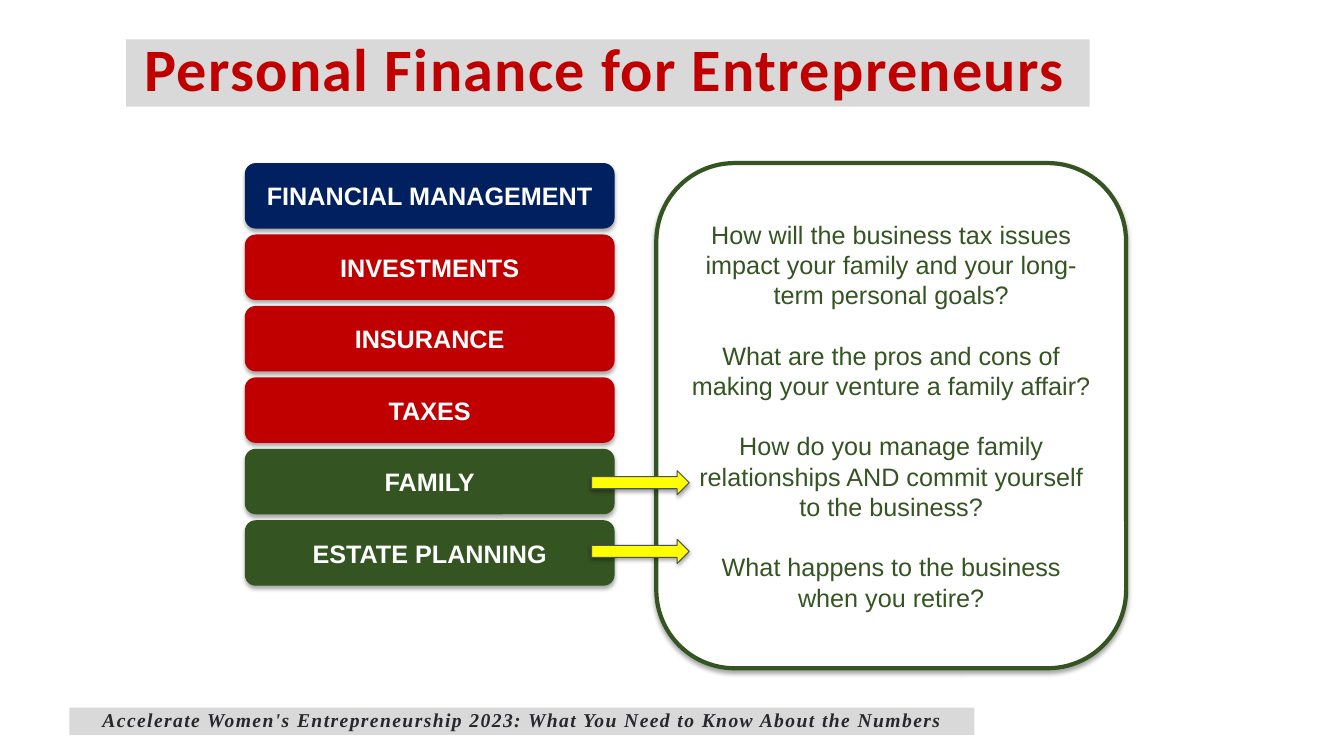
import lxml.etree
import pptx
import pptx.dml.color
import pptx.enum.shapes
import pptx.enum.text
import pptx.oxml.ns
import pptx.util

Cm = pptx.util.Cm
Pt = pptx.util.Pt
RGBColor = pptx.dml.color.RGBColor
MSO_SHAPE = pptx.enum.shapes.MSO_SHAPE
MSO_ANCHOR = pptx.enum.text.MSO_ANCHOR
PP_ALIGN = pptx.enum.text.PP_ALIGN
qn = pptx.oxml.ns.qn

NAVY = RGBColor(0x00, 0x20, 0x60)
RED = RGBColor(0xC0, 0x00, 0x00)
GREEN = RGBColor(0x34, 0x55, 0x22)
YELLOW = RGBColor(0xFF, 0xFF, 0x00)
WHITE = RGBColor(0xFF, 0xFF, 0xFF)
GREY = RGBColor(0xD9, 0xD9, 0xD9)
SLATE = RGBColor(0x4C, 0x51, 0x5A)
INK = RGBColor(0x26, 0x28, 0x2D)

TOPICS = [
    ("FINANCIAL MANAGEMENT", NAVY),
    ("INVESTMENTS", RED),
    ("INSURANCE", RED),
    ("TAXES", RED),
    ("FAMILY", GREEN),
    ("ESTATE PLANNING", GREEN),
]
QUESTIONS = [
    "How will the business tax issues impact your family and your long-term personal goals?",
    "What are the pros and cons of making your venture a family affair?",
    "How do you manage family relationships AND commit yourself to the business?",
    "What happens to the business when you retire?",
]
FOOTER = "Accelerate Women's Entrepreneurship 2023: What You Need to Know About the Numbers"
TOPIC_TOP = 4.11
TOPIC_PITCH = 1.8
ARROW_TOPS = [11.86, 13.59]


def add_soft_shadow(shape):
    shape.shadow.inherit = False
    effects = shape._element.spPr.find(qn("a:effectLst"))
    shadow = lxml.etree.SubElement(
        effects, qn("a:outerShdw"), blurRad=str(Pt(3.1)), dist=str(Pt(1.8)),
        dir="5400000", algn="ctr", rotWithShape="0")
    color = lxml.etree.SubElement(shadow, qn("a:srgbClr"), val="000000")
    lxml.etree.SubElement(color, qn("a:alpha"), val="35000")


def add_block(slide, kind, left, top, width, height, fill, line=None, line_width=0):
    shape = slide.shapes.add_shape(kind, Cm(left), Cm(top), Cm(width), Cm(height))
    shape.fill.solid()
    shape.fill.fore_color.rgb = fill
    if line is None:
        shape.line.fill.background()
    else:
        shape.line.color.rgb = line
        shape.line.width = Pt(line_width)
    add_soft_shadow(shape)
    return shape


def format_paragraph(paragraph, font_name, size, color, bold=False, align=PP_ALIGN.CENTER):
    paragraph.alignment = align
    for run in paragraph.runs:
        run.font.name = font_name
        run.font.size = Pt(size)
        run.font.color.rgb = color
        run.font.bold = bold


def add_topics(slide):
    for index, (label, color) in enumerate(TOPICS):
        shape = add_block(slide, MSO_SHAPE.ROUNDED_RECTANGLE, 6.17,
                          TOPIC_TOP + index * TOPIC_PITCH, 9.32, 1.65, color)
        shape.text_frame.text = label
        shape.text_frame.vertical_anchor = MSO_ANCHOR.MIDDLE
        format_paragraph(shape.text_frame.paragraphs[0], "Arial", 18, WHITE, bold=True)


def add_questions(slide):
    shape = add_block(slide, MSO_SHAPE.ROUNDED_RECTANGLE, 16.54, TOPIC_TOP,
                      11.84, 12.73, WHITE, GREEN, 3)
    text_frame = shape.text_frame
    text_frame.text = "\n".join(QUESTIONS)
    text_frame.word_wrap = True
    text_frame.vertical_anchor = MSO_ANCHOR.MIDDLE
    for index, paragraph in enumerate(text_frame.paragraphs):
        paragraph.line_spacing = Pt(21.6)
        paragraph.space_before = Pt(21.6 if index else 0)
        format_paragraph(paragraph, "Arial", 18, GREEN)


def format_banner(shape, text, left, top, width, height, left_inset, top_inset):
    shape.left, shape.top = Cm(left), Cm(top)
    shape.width, shape.height = Cm(width), Cm(height)
    shape.fill.solid()
    shape.fill.fore_color.rgb = GREY
    text_frame = shape.text_frame
    text_frame.text = text
    text_frame.word_wrap = True
    text_frame.auto_size = pptx.enum.text.MSO_AUTO_SIZE.NONE
    text_frame.vertical_anchor = MSO_ANCHOR.TOP
    text_frame.margin_left, text_frame.margin_top = Cm(left_inset), Cm(top_inset)
    text_frame.margin_right = text_frame.margin_bottom = 0
    paragraph = text_frame.paragraphs[0]
    paragraph.line_spacing = 0.8
    paragraph.space_before = Pt(0)
    paragraph.runs[0].font._element.set("spc", "100")
    return paragraph


def add_title(slide):
    paragraph = format_banner(slide.shapes.title, "Personal Finance for Entrepreneurs",
                              3.18, 0.99, 24.28, 1.7, 0.46, 0.14)
    format_paragraph(paragraph, "Calibri", 43, RED, bold=True, align=PP_ALIGN.LEFT)


def add_footer(slide):
    shape = slide.shapes.add_textbox(0, 0, 0, 0)
    paragraph = format_banner(shape, FOOTER, 1.75, 17.83, 22.81, 0.69, 0, 0.13)
    format_paragraph(paragraph, "Times New Roman", 14, INK, bold=True)
    paragraph.runs[0].font.italic = True


def main():
    presentation = pptx.Presentation()
    presentation.slide_width = Cm(33.87)
    presentation.slide_height = Cm(19.05)
    slide = presentation.slides.add_slide(presentation.slide_layouts[5])
    add_title(slide)
    add_topics(slide)
    add_questions(slide)
    for top in ARROW_TOPS:
        add_block(slide, MSO_SHAPE.RIGHT_ARROW, 14.91, top, 2.46, 0.61, YELLOW, SLATE, 0.75)
    add_footer(slide)
    presentation.save("out.pptx")


if __name__ == "__main__":
    main()
